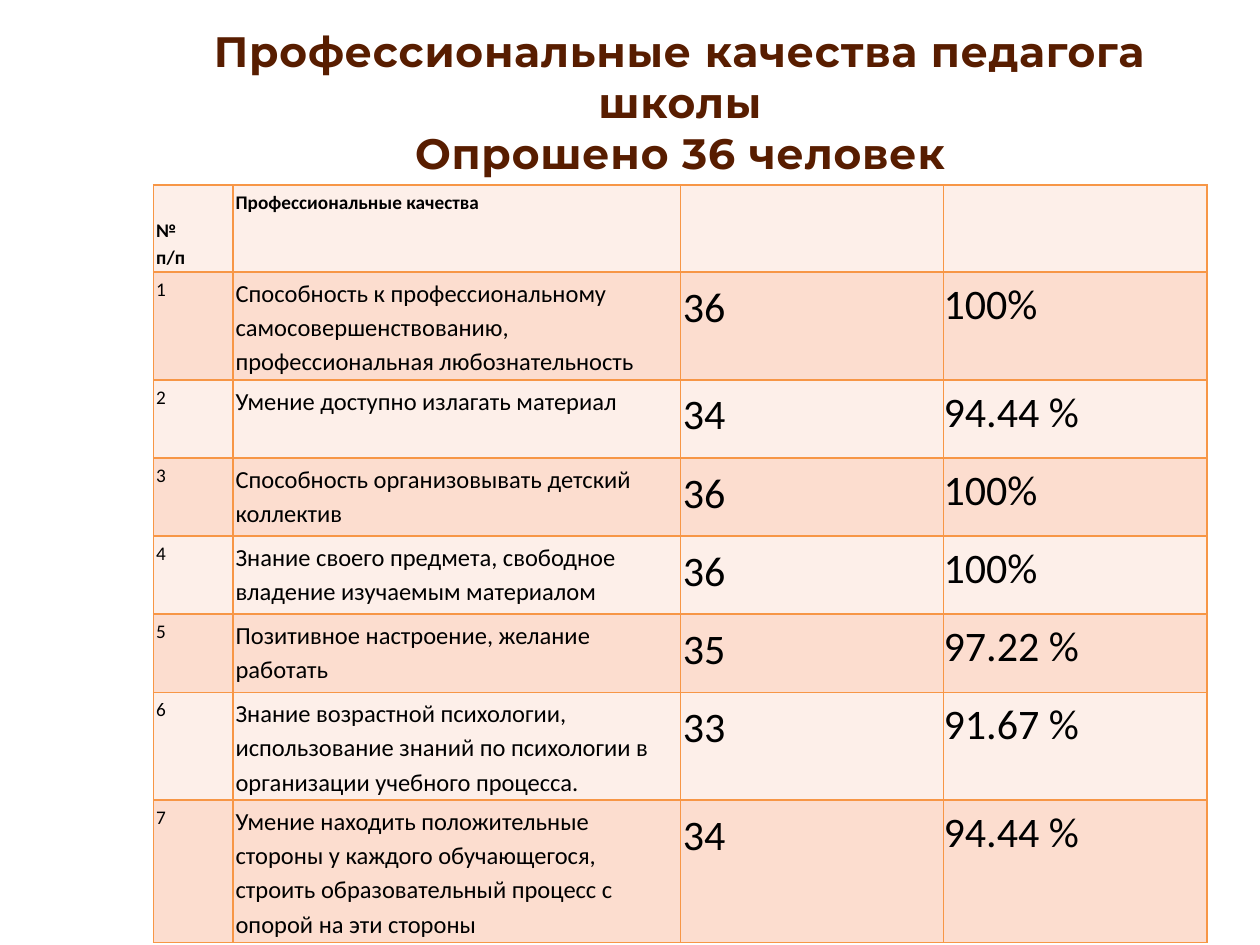
"""Build a slide with survey results on teacher qualities."""
import pptx
import pptx.dml.color
import pptx.enum.text
import pptx.oxml
import pptx.oxml.ns
import pptx.util

Inches = pptx.util.Inches
Pt = pptx.util.Pt
ANCHOR = pptx.enum.text.MSO_ANCHOR

HUES = {"title": "581D00", "text": "000000", "edge": "F79646",
        "light": "FDEFE9", "dark": "FCDDCF"}
LEFT, WIDTH = 1.22, 8.36
COLS = (0.63, 3.55, 2.09, 2.09)
SIZES = (11, 14, 24, 24)
HEAD = ("№\vп/п", "Профессиональные качества")
ROWS = (
    ("Способность к профессиональному самосовершенствованию, "
     "профессиональная любознательность", "36", "100%"),
    ("Умение доступно излагать материал", "34", "94.44 %"),
    ("Способность организовывать детский коллектив", "36", "100%"),
    ("Знание своего предмета, свободное владение изучаемым материалом",
     "36", "100%"),
    ("Позитивное настроение, желание работать", "35", "97.22 %"),
    ("Знание возрастной психологии, использование знаний по психологии "
     "в организации учебного процесса.", "33", "91.67 %"),
    ("Умение находить положительные стороны у каждого обучающегося, "
     "строить образовательный процесс с опорой на эти стороны",
     "34", "94.44 %"),
)


def tint(name):
    """Return the named colour."""
    return pptx.dml.color.RGBColor.from_string(HUES[name])


def apply(item, form):
    """Set each attribute of the item from a dict."""
    for key, value in form.items():
        setattr(item, key, value)


def style(part, hue, form):
    """Format the font of a paragraph or run."""
    apply(part.font, form)
    part.font.color.rgb = tint(hue)


def add_title(slide):
    """Fill and place the title."""
    title = slide.shapes.title
    apply(title, {"left": Inches(LEFT), "top": Inches(0.6),
                  "width": Inches(WIDTH), "height": Inches(1.02)})
    frame = title.text_frame
    frame.text = ("Профессиональные качества педагога школы\v"
                  "Опрошено 36 человек")
    apply(frame, {"word_wrap": True, "margin_bottom": Inches(0.21),
                  "auto_size": pptx.enum.text.MSO_AUTO_SIZE.NONE,
                  "vertical_anchor": ANCHOR.BOTTOM})
    para = frame.paragraphs[0]
    apply(para, {"alignment": pptx.enum.text.PP_ALIGN.CENTER,
                 "line_spacing": 1.0})
    for run in para.runs:
        style(run, "title",
              {"name": "Montserrat", "size": Pt(24.3), "bold": True})
        run.font._element.set("spc", "50")


def add_edges(cell):
    """Draw the four borders of a cell."""
    props = cell._tc.get_or_add_tcPr()
    for spot, side in enumerate("LRTB"):
        props.insert(spot, pptx.oxml.parse_xml(
            f'<a:ln{side} {pptx.oxml.ns.nsdecls("a")} w="{Pt(1)}">'
            f'<a:solidFill><a:srgbClr val="{HUES["edge"]}"/></a:solidFill>'
            f'</a:ln{side}>'))


def fill_cell(cell, text, size, bold, inset):
    """Write formatted text into a cell."""
    cell.text = text
    gap = Inches(inset)
    apply(cell, {f"margin_{side}": gap
                 for side in ("left", "right", "top", "bottom")})
    para = cell.text_frame.paragraphs[0]
    apply(para, {"line_spacing": 1.15, "space_after": Pt(10)})
    form = {"name": "Calibri", "size": Pt(size), "bold": bold}
    for part in (para, *para.runs):
        style(part, "text", form)


def add_grid(slide):
    """Build the table of answers."""
    lines = [HEAD] + [(str(num), *row) for num, row in enumerate(ROWS, 1)]
    table = slide.shapes.add_table(
        len(lines), len(COLS), Inches(LEFT), Inches(1.47),
        Inches(WIDTH), Inches(0.62 * len(lines))).table
    for col, width in zip(table.columns, COLS):
        col.width = Inches(width)
    table.rows[0].height = Inches(0.69)
    for y, line in enumerate(lines):
        for x in range(len(COLS)):
            cell = table.cell(y, x)
            cell.fill.solid()
            cell.fill.fore_color.rgb = tint("dark" if y % 2 else "light")
            add_edges(cell)
            if x < len(line):
                fill_cell(cell, line[x], SIZES[x] if y else 11,
                          y == 0, 0 if x == 3 else 0.02)
    table.cell(0, 0).vertical_anchor = ANCHOR.BOTTOM


def main():
    """Make and save the deck."""
    deck = pptx.Presentation()
    apply(deck, {"slide_width": Inches(10), "slide_height": Inches(7.5)})
    slide = deck.slides.add_slide(deck.slide_layouts[5])
    add_title(slide)
    add_grid(slide)
    deck.save("out.pptx")


if __name__ == "__main__":
    main()
